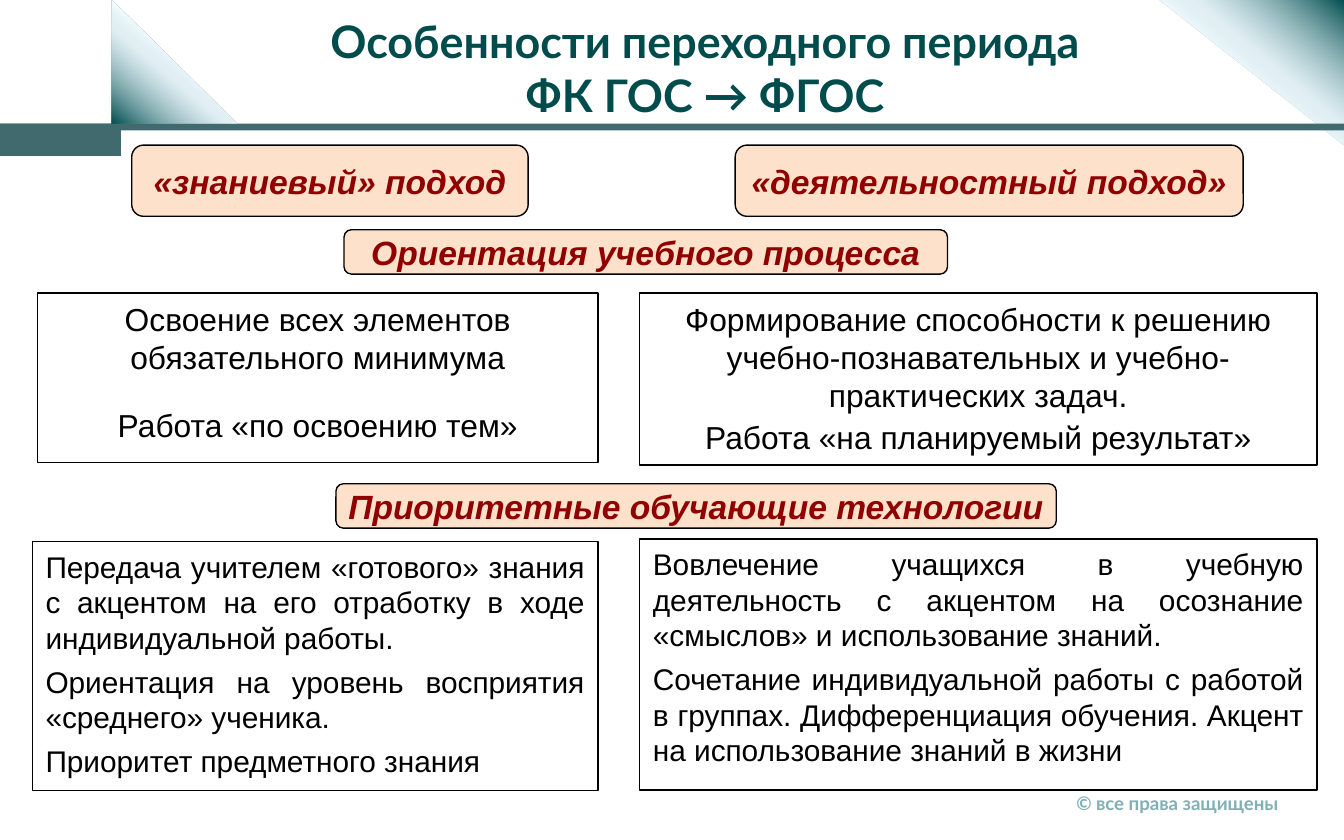
from dataclasses import dataclass

from lxml import etree
from pptx import Presentation
from pptx import util as u
from pptx.dml.color import RGBColor
from pptx.enum import shapes, text
from pptx.oxml import parse_xml
from pptx.oxml.ns import nsdecls, qn

PX = 9144  # EMU per px, 100 px to the inch


@dataclass(frozen=True)
class Theme:
    title: str = "004C4D"
    band: str = "416A6F"
    footer: str = "81AFB5"
    label_fill: str = "FDE1CA"
    label_text: str = "900000"
    ink: str = "000000"
    # position %, colour, opacity %
    gradient: tuple = ((46, "F7FFFF", 100), (58, "C4E0EA", 50),
                       (100, "004C4D", 100), (100, "003333", 100))
    heading_font: str = "Lato"
    body_font: str = "Arial"
    title_size: int = 24
    label_size: int = 18
    aim_size: int = 17
    method_size: int = 16
    footer_size: int = 10


class SlideBuilder:
    def __init__(self, slide, theme):
        self.slide = slide
        self.theme = theme

    def _shape(self, kind, box, fill=None, line=None):
        shape = self.slide.shapes.add_shape(kind, *(n * PX for n in box))
        shape.shadow.inherit = False
        if fill:
            shape.fill.solid()
            shape.fill.fore_color.rgb = RGBColor.from_string(fill)
        else:
            shape.fill.background()
        if line:
            shape.line.color.rgb = RGBColor.from_string(line)
            shape.line.width = u.Pt(0.75)
        else:
            shape.line.fill.background()
        return shape

    def _write(self, shape, paragraphs, size, color, font, align, gap=0,
               bold=False, italic=False, anchor=text.MSO_ANCHOR.TOP, wrap=True):
        """Fill a shape with paragraphs, gap points apart."""
        frame = shape.text_frame
        frame.word_wrap = wrap
        frame.auto_size = text.MSO_AUTO_SIZE.NONE
        frame.vertical_anchor = anchor
        for index, words in enumerate(paragraphs):
            paragraph = frame.add_paragraph() if index else frame.paragraphs[0]
            paragraph.alignment = align
            if index:
                paragraph.space_before = u.Pt(gap)
            run = paragraph.add_run()
            run.text = words
            run.font.name = font
            run.font.size = u.Pt(size)
            run.font.bold = bold
            run.font.italic = italic
            run.font.color.rgb = RGBColor.from_string(color)

    def title(self, box, lines):
        title = self.slide.shapes.title
        title.left, title.top, title.width, title.height = (n * PX for n in box)
        self._write(title, lines, self.theme.title_size, self.theme.title,
                    self.theme.heading_font, text.PP_ALIGN.CENTER, bold=True)

    def band(self, box):
        self._shape(shapes.MSO_SHAPE.RECTANGLE, box, self.theme.band)

    def corner(self, box, rotation):
        """Mirrored right triangle, darkest at its right angle."""
        shape = self._shape(shapes.MSO_SHAPE.RIGHT_TRIANGLE, box)
        shape.rotation = rotation
        properties = shape.element.spPr
        properties.find(qn("a:xfrm")).set("flipH", "1")
        gradient = parse_xml(f'<a:gradFill {nsdecls("a")} rotWithShape="1"><a:gsLst/>'
                             f'<a:lin ang="{140 * 60000}" scaled="0"/></a:gradFill>')
        for position, color, opacity in self.theme.gradient:
            stop = etree.SubElement(gradient[0], qn("a:gs"), pos=str(position * 1000))
            tint = etree.SubElement(stop, qn("a:srgbClr"), val=color)
            if opacity < 100:
                etree.SubElement(tint, qn("a:alpha"), val=str(opacity * 1000))
        properties.replace(properties.find(qn("a:noFill")), gradient)

    def label(self, box, words):
        shape = self._shape(shapes.MSO_SHAPE.ROUNDED_RECTANGLE, box,
                            self.theme.label_fill, self.theme.ink)
        self._write(shape, [words], self.theme.label_size, self.theme.label_text,
                    self.theme.body_font, text.PP_ALIGN.CENTER, bold=True,
                    italic=True, anchor=text.MSO_ANCHOR.MIDDLE, wrap=False)

    def panel(self, box, paragraphs, size, align, gap):
        shape = self._shape(shapes.MSO_SHAPE.RECTANGLE, box, line=self.theme.ink)
        self._write(shape, paragraphs, size, self.theme.ink,
                    self.theme.body_font, align, gap)

    def footer(self, box, words):
        shape = self.slide.shapes.add_textbox(*(n * PX for n in box))
        self._write(shape, [words], self.theme.footer_size, self.theme.footer,
                    self.theme.heading_font, text.PP_ALIGN.LEFT, bold=True)


def main():
    presentation = Presentation()
    presentation.slide_width = 1000 * PX
    presentation.slide_height = 625 * PX
    theme = Theme()
    slide = presentation.slides.add_slide(presentation.slide_layouts[5])
    builder = SlideBuilder(slide, theme)

    builder.corner((877, -15, 108, 138), 270)
    builder.footer((791, 584, 194, 27), "© все права защищены")
    builder.band((0, 92, 1000, 5))
    builder.band((0, 92, 90, 24))
    builder.corner((84, -1, 92, 94), 90)
    builder.title((122, 5, 805, 91),
                  ["Особенности переходного периода", "ФК ГОС → ФГОС"])

    for box, words in (
        ((98, 108, 295, 53), "«знаниевый» подход"),
        ((547, 108, 378, 53), "«деятельностный подход»"),
        ((256, 171, 449, 33), "Ориентация учебного процесса"),
        ((250, 360, 536, 33), "Приоритетные обучающие технологии"),
    ):
        builder.label(box, words)

    center, justify = text.PP_ALIGN.CENTER, text.PP_ALIGN.JUSTIFY
    builder.panel((28, 218, 417, 126), [
        "Освоение всех элементов обязательного минимума",
        "Работа «по освоению тем»",
    ], theme.aim_size, center, 16)
    builder.panel((476, 218, 504, 128), [
        "Формирование способности к решению учебно-познавательных "
        "и учебно-практических задач.",
        "Работа «на планируемый результат»",
    ], theme.aim_size, center, 2)
    builder.panel((24, 403, 421, 185), [
        "Передача учителем «готового» знания с акцентом на его отработку "
        "в ходе индивидуальной работы.",
        "Ориентация на уровень восприятия «среднего» ученика.",
        "Приоритет предметного знания",
    ], theme.method_size, justify, 4)
    builder.panel((476, 401, 504, 187), [
        "Вовлечение учащихся в учебную деятельность с акцентом на осознание "
        "«смыслов» и использование знаний.",
        "Сочетание индивидуальной работы с работой в группах. "
        "Дифференциация обучения. Акцент на использование знаний в жизни",
    ], theme.method_size, justify, 4)

    presentation.save("out.pptx")


if __name__ == "__main__":
    main()
